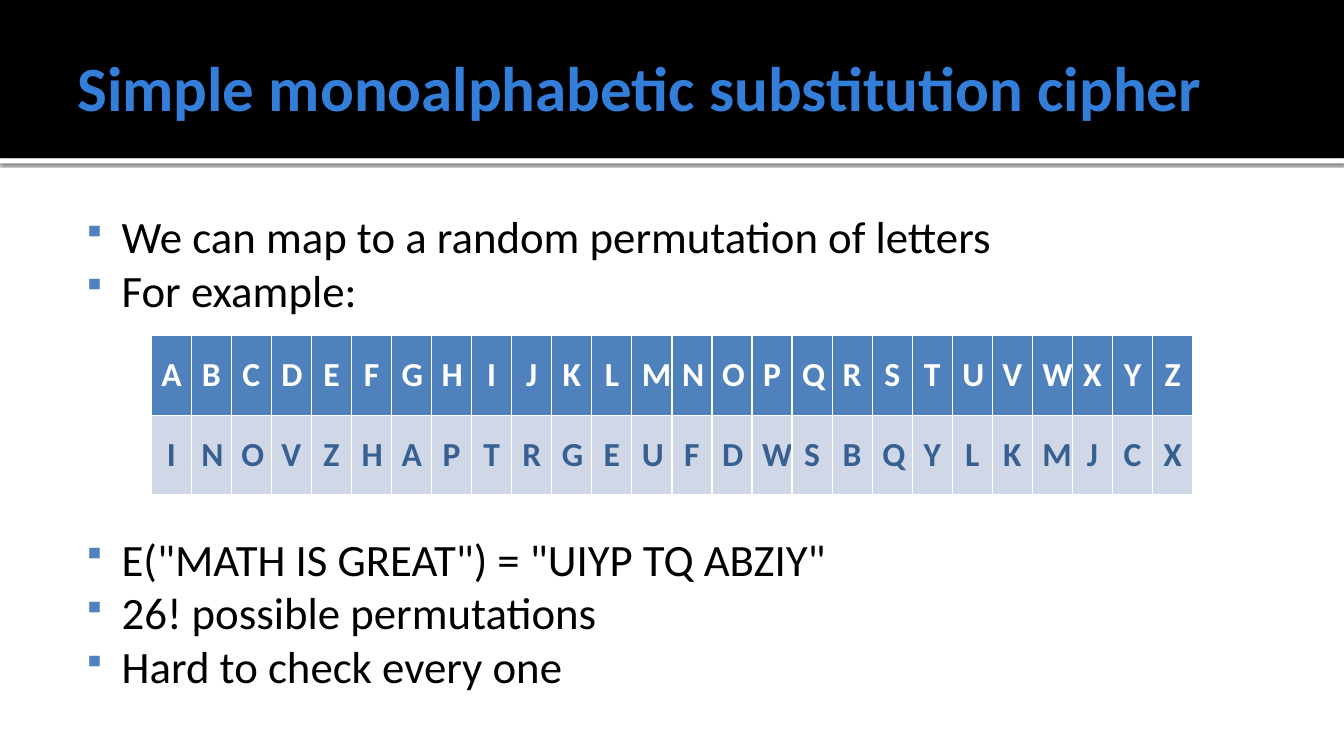
from lxml import etree
from pptx import Presentation, util as u
from pptx.dml.color import RGBColor
from pptx.enum import shapes, text
from pptx.oxml.ns import qn

TITLE = "Simple monoalphabetic substitution cipher"
BEFORE_KEY = ["We can map to a random permutation of letters", "For example:"]
AFTER_KEY = [
    'E("MATH IS GREAT") = "UIYP TQ ABZIY"',
    "26! possible permutations",
    "Hard to check every one",
]
# letters, fill, font colour
KEY = [
    ("ABCDEFGHIJKLMNOPQRSTUVWXYZ", "4F81BD", "FFFFFF"),
    ("INOVZHAPTRGEUFDWSBQYLKMJCX", "D0D8E8", "376092"),
]
FONT = "Calibri"
WIDTH, HEIGHT = 13.33, 7.5
MARGIN = 0.05 * WIDTH
HEADER_HEIGHT, RULE_HEIGHT = 1.57, 0.05
KEY_LEFT, KEY_TOP, KEY_ROW = 1.5, 3.33, 0.79
LINE = 38.4  # points
KEY_LINES = 4  # lines of the list left free for the table


def color(value):
    return RGBColor.from_string(value)


def style(paragraph, size, value, bold=False):
    font = paragraph.font
    font.name, font.size, font.bold = FONT, u.Pt(size), bold
    font.color.rgb = color(value)


def place(shape, left, top, width, height):
    shape.left, shape.top = u.Inches(left), u.Inches(top)
    shape.width, shape.height = u.Inches(width), u.Inches(height)


def set_insets(frame, left, top, right, bottom):
    frame.margin_left, frame.margin_top = u.Inches(left), u.Inches(top)
    frame.margin_right, frame.margin_bottom = u.Inches(right), u.Inches(bottom)
    frame.word_wrap = True
    frame.auto_size = text.MSO_AUTO_SIZE.NONE


def add_bullet(paragraph):
    """Square bullet with a hanging indent."""
    props = paragraph._p.get_or_add_pPr()
    props.set("marL", str(u.Inches(0.48)))
    props.set("indent", str(u.Inches(-0.35)))
    tint = etree.SubElement(props, qn("a:buClr"))
    etree.SubElement(tint, qn("a:srgbClr"), val="4F81BD")
    etree.SubElement(props, qn("a:buSzPct"), val="80000")
    etree.SubElement(props, qn("a:buFont"), typeface="Wingdings")
    etree.SubElement(props, qn("a:buChar"), char="§")


def add_band(slide, top, height, fill):
    """Full-width band behind everything added so far."""
    band = slide.shapes.add_shape(
        shapes.MSO_SHAPE.RECTANGLE, 0, u.Inches(top), u.Inches(WIDTH), u.Inches(height))
    band.shadow.inherit = False
    band.fill.solid()
    band.fill.fore_color.rgb = color(fill)
    band.line.fill.background()
    slide.shapes._spTree.insert(2, band._element)
    return band


def add_shadow(shape):
    effects = shape._element.spPr.find(qn("a:effectLst"))
    shadow = etree.SubElement(
        effects, qn("a:outerShdw"), blurRad=str(u.Pt(2.5)), dist=str(u.Pt(0.8)),
        dir="5400000", algn="tl", rotWithShape="0")
    tint = etree.SubElement(shadow, qn("a:srgbClr"), val="000000")
    etree.SubElement(tint, qn("a:alpha"), val="60000")


def main():
    deck = Presentation()
    deck.slide_width, deck.slide_height = u.Inches(WIDTH), u.Inches(HEIGHT)
    slide = deck.slides.add_slide(deck.slide_layouts[1])

    add_band(slide, 0, HEADER_HEIGHT, "000000")
    add_shadow(add_band(slide, HEADER_HEIGHT, RULE_HEIGHT, "FFFFFF"))

    title = slide.shapes.title
    place(title, MARGIN, 0.17, WIDTH - 2 * MARGIN, 1.37)
    title.text = TITLE
    set_insets(title.text_frame, 0.1, 0.05, 0.05, 0.05)
    title.text_frame.vertical_anchor = text.MSO_ANCHOR.MIDDLE
    heading = title.text_frame.paragraphs[0]
    heading.alignment = text.PP_ALIGN.LEFT
    style(heading, 45, "337ED9", bold=True)

    body = slide.placeholders[1]
    place(body, MARGIN, 1.94, WIDTH - 2 * MARGIN, 5.06)
    body.text = "\n".join(BEFORE_KEY + AFTER_KEY)
    set_insets(body.text_frame, 0.06, 0.13, 0.1, 0.05)
    for number, point in enumerate(body.text_frame.paragraphs):
        point.line_spacing = u.Pt(LINE)
        point.space_before = u.Pt(KEY_LINES * LINE if number == len(BEFORE_KEY) else 0)
        style(point, 32, "000000")
        add_bullet(point)

    columns = len(KEY[0][0])
    key = slide.shapes.add_table(
        len(KEY), columns, u.Inches(KEY_LEFT), u.Inches(KEY_TOP),
        u.Inches(WIDTH - 2 * KEY_LEFT), u.Inches(KEY_ROW * len(KEY))).table
    for row, (letters, fill, ink) in enumerate(KEY):
        for column, letter in enumerate(letters):
            cell = key.cell(row, column)
            cell.text = letter
            cell.vertical_anchor = text.MSO_ANCHOR.MIDDLE
            cell.fill.solid()
            cell.fill.fore_color.rgb = color(fill)
            paragraph = cell.text_frame.paragraphs[0]
            paragraph.alignment = text.PP_ALIGN.CENTER
            style(paragraph, 24, ink, bold=True)

    deck.save("out.pptx")


if __name__ == "__main__":
    main()
